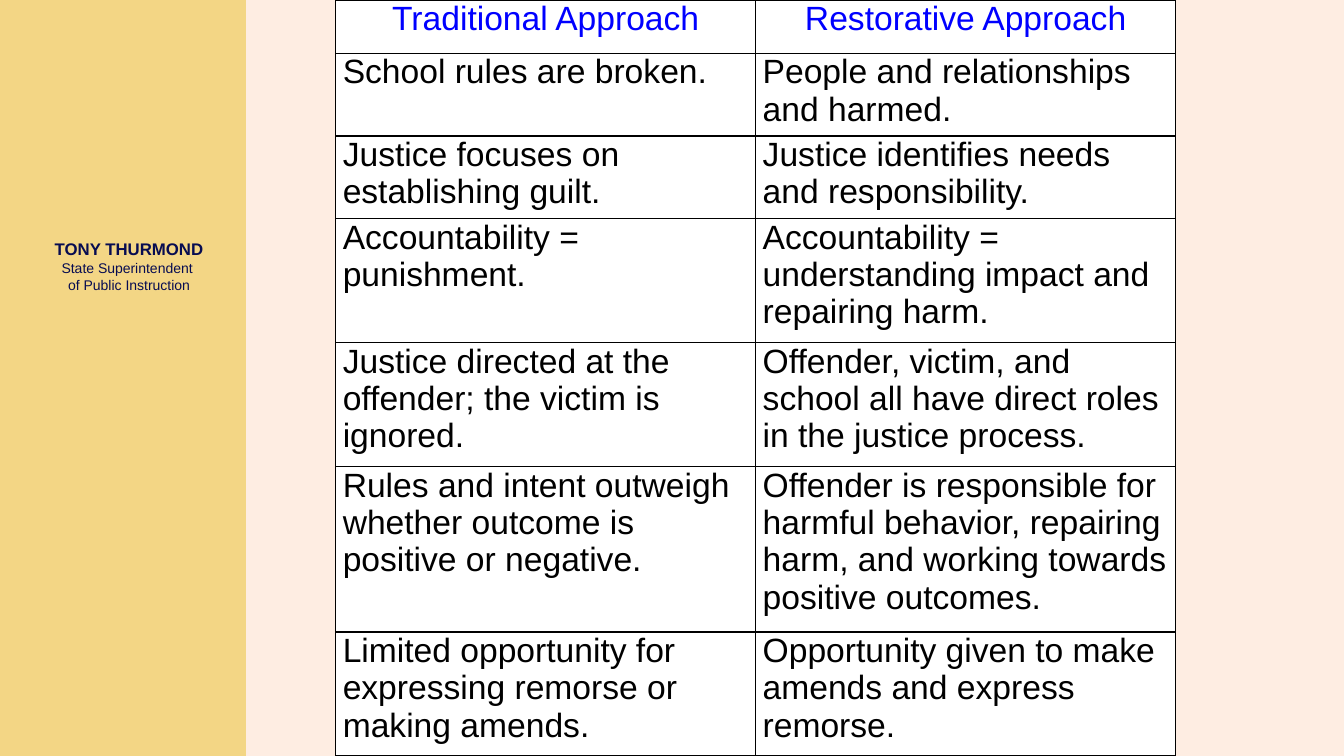
import dataclasses

import pptx
import pptx.dml.color
import pptx.enum.shapes
import pptx.enum.text
import pptx.oxml
import pptx.oxml.ns
import pptx.util

Inches = pptx.util.Inches
Pt = pptx.util.Pt
Align = pptx.enum.text.PP_ALIGN
Anchor = pptx.enum.text.MSO_ANCHOR


@dataclasses.dataclass(frozen=True)
class Theme:
    font: str = "Arial"
    page: str = "FEEDE2"
    band: str = "F3D685"
    navy: str = "070C51"
    head: str = "0000FF"
    ink: str = "000000"
    paper: str = "FFFFFF"
    large: int = 24
    name: int = 12
    small: int = 10


THEME = Theme()

ROWS = [
    ("Traditional Approach", "Restorative Approach"),
    ("School rules are broken.", "People and relationships and harmed."),
    ("Justice focuses on establishing guilt.",
     "Justice identifies needs and responsibility."),
    ("Accountability = punishment.",
     "Accountability = understanding impact and repairing harm."),
    ("Justice directed at the offender; the victim is ignored.",
     "Offender, victim, and school all have direct roles in the justice process."),
    ("Rules and intent outweigh whether outcome is positive or negative.",
     "Offender is responsible for harmful behavior, repairing harm, "
     "and working towards positive outcomes."),
    ("Limited opportunity for expressing remorse or making amends.",
     "Opportunity given to make amends and express remorse."),
]
HEIGHTS = [0.53, 0.82, 0.82, 1.23, 1.23, 1.64, 1.23]


def rgb(code):
    return pptx.dml.color.RGBColor.from_string(code)


def add_run(para, text, size, color, bold=False):
    run = para.add_run()
    run.text = text
    run.font.name = THEME.font
    run.font.size = Pt(size)
    run.font.bold = bold
    run.font.color.rgb = rgb(color)


def add_panel(slide, box, color):
    panel = slide.shapes.add_shape(
        pptx.enum.shapes.MSO_SHAPE.RECTANGLE, *map(Inches, box))
    panel.shadow.inherit = False
    panel.fill.solid()
    panel.fill.fore_color.rgb = rgb(color)
    panel.line.fill.background()


def add_side(slide, box):
    left, top, width, height = box
    add_panel(slide, box, THEME.band)
    label = slide.shapes.add_textbox(
        Inches(left + 0.35), Inches(top + 2.26), Inches(1.86), Inches(0.76))
    frame = label.text_frame
    frame.word_wrap = True
    frame.vertical_anchor = Anchor.MIDDLE
    para = frame.paragraphs[0]
    para.alignment = Align.CENTER
    add_run(para, "TONY THURMOND", THEME.name, THEME.navy, True)
    for line in ("State Superintendent ", "of Public Instruction"):
        para.add_line_break()
        add_run(para, line, THEME.small, THEME.navy)


def add_edges(cell):
    props = cell._tc.get_or_add_tcPr()
    space = pptx.oxml.ns.nsdecls("a")
    for side in "LRTB":
        props.append(pptx.oxml.parse_xml(
            f'<a:ln{side} {space} w="{Pt(1)}"><a:solidFill>'
            f'<a:srgbClr val="{THEME.ink}"/></a:solidFill></a:ln{side}>'))


def fill_cell(cell, text, header):
    add_edges(cell)
    cell.fill.solid()
    cell.fill.fore_color.rgb = rgb(THEME.paper)
    cell.margin_left = cell.margin_right = Inches(0.07)
    cell.margin_top = cell.margin_bottom = 0
    cell.vertical_anchor = Anchor.TOP
    para = cell.text_frame.paragraphs[0]
    para.alignment = Align.CENTER if header else Align.LEFT
    para.space_after = Pt(12 if header else 6)
    add_run(para, text, THEME.large, THEME.head if header else THEME.ink)


def add_grid(slide, box):
    count = len(ROWS[0])
    table = slide.shapes.add_table(len(ROWS), count, *map(Inches, box)).table
    table.first_row = table.horz_banding = False
    for col in table.columns:
        col.width = Inches(box[2] / count)
    for y, (texts, height) in enumerate(zip(ROWS, HEIGHTS)):
        table.rows[y].height = Inches(height)
        for x, text in enumerate(texts):
            fill_cell(table.cell(y, x), text, y == 0)


def main():
    deck = pptx.Presentation()
    deck.slide_width = Inches(13.33)
    deck.slide_height = Inches(7.5)
    slide = deck.slides.add_slide(deck.slide_layouts[6])
    add_panel(slide, (0, 0, 13.33, 7.5), THEME.page)
    add_side(slide, (0, 0, 2.44, 7.5))
    add_grid(slide, (3.33, 0, 8.33, 7.5))
    deck.save("out.pptx")


if __name__ == "__main__":
    main()
